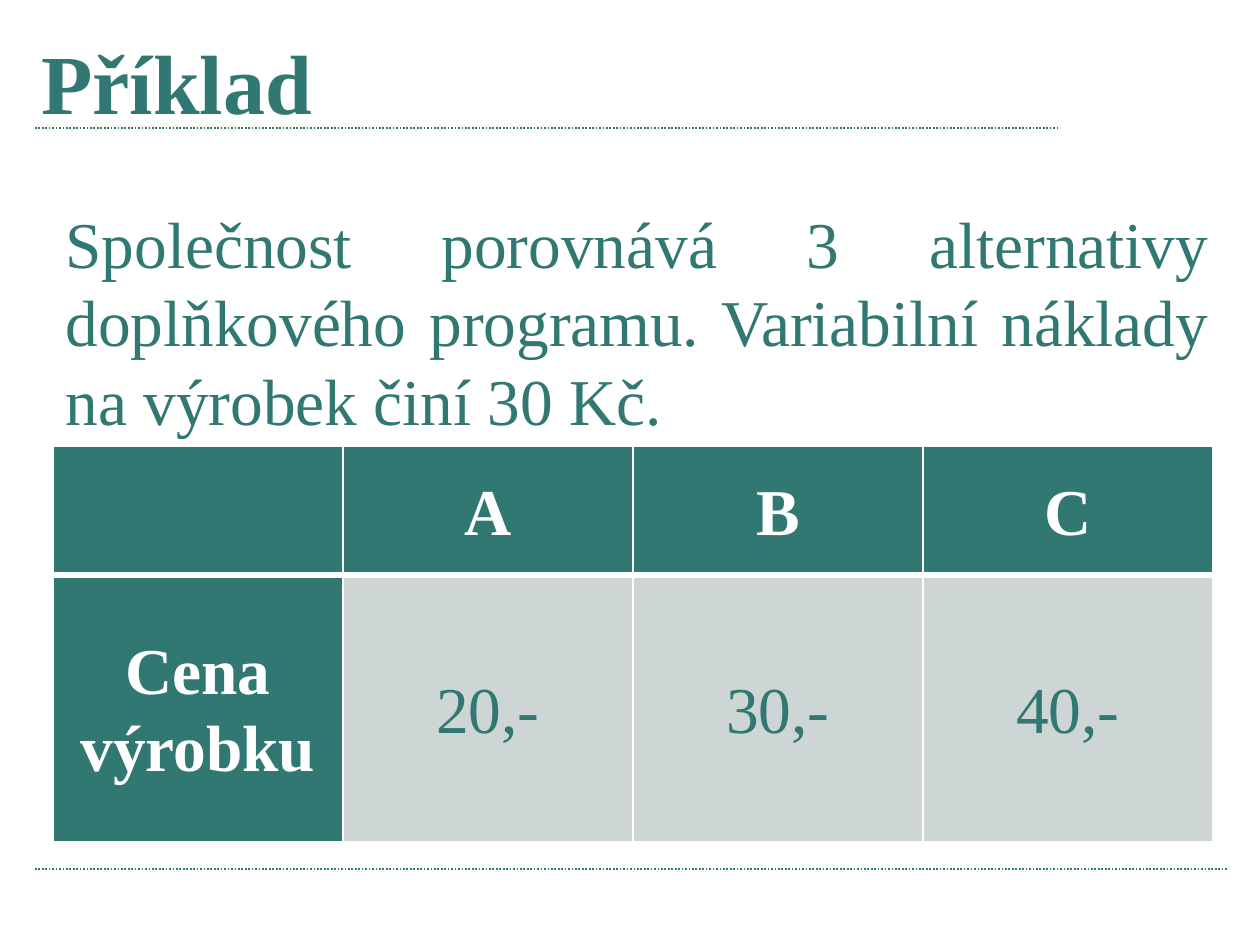
from lxml.etree import SubElement
from pptx import Presentation
from pptx.dml.color import RGBColor
from pptx.enum.dml import MSO_LINE
from pptx.enum.shapes import MSO_CONNECTOR
from pptx.enum.text import MSO_ANCHOR, PP_ALIGN
from pptx.oxml import parse_xml
from pptx.oxml.ns import nsdecls, qn
from pptx.util import Pt

EMU_PER_PX = 914400 // 168
FONT = "Times New Roman"
COLORS = {"teal": "307871", "gray": "CDD6D5", "white": "FFFFFF"}
ROWS = [["", "A", "B", "C"], ["Cena výrobku", "20,-", "30,-", "40,-"]]
ROW_HEIGHTS = [129, 267]
COLUMN_WIDTH = 290


def px(*lengths):
    """Turn pixel lengths into a list of EMU."""
    return [length * EMU_PER_PX for length in lengths]


def color(name):
    """Look up a named colour."""
    return RGBColor.from_string(COLORS[name])


def format_paragraph(paragraph, size, color_name, bold, alignment, spacing):
    """Set the alignment, line spacing and font of a paragraph."""
    paragraph.alignment = alignment
    paragraph.line_spacing = spacing
    for font in [paragraph.font] + [run.font for run in paragraph.runs]:
        font.name = FONT
        font.size = Pt(size)
        font.bold = bold
        font.color.rgb = color(color_name)


def add_text(slide, box, text, size, top_margin, bold=False,
             alignment=PP_ALIGN.LEFT):
    """Add a wrapped teal text box."""
    frame = slide.shapes.add_textbox(*px(*box)).text_frame
    frame.word_wrap = True
    frame.margin_top = px(top_margin)[0]
    frame.text = text
    format_paragraph(frame.paragraphs[0], size, "teal", bold, alignment, 1.0)


def add_dotted_rule(slide, left, right, y):
    """Add a horizontal dotted teal line."""
    rule = slide.shapes.add_connector(MSO_CONNECTOR.STRAIGHT, *px(left, y, right, y))
    rule.line.color.rgb = color("teal")
    rule.line.width = Pt(0.75)
    rule.line.dash_style = MSO_LINE.ROUND_DOT
    SubElement(rule.element.spPr, qn("a:effectLst"))


def set_borders(cell, widths):
    """Give the cell white borders with widths in points by side."""
    properties = cell._tc.get_or_add_tcPr()
    for index, (side, width) in enumerate(widths.items()):
        border = parse_xml(
            f'<a:ln{side} {nsdecls("a")} w="{Pt(width)}"><a:solidFill>'
            f'<a:srgbClr val="{COLORS["white"]}"/></a:solidFill></a:ln{side}>')
        properties.insert(index, border)


def fill_cell(cell, text, is_heading, is_first_row):
    """Write and style one table cell."""
    cell.fill.solid()
    cell.fill.fore_color.rgb = color("teal" if is_heading else "gray")
    cell.vertical_anchor = MSO_ANCHOR.MIDDLE
    cell.margin_left = cell.margin_right = px(10)[0]
    cell.margin_top = cell.margin_bottom = 0
    cell.text_frame.text = text
    format_paragraph(cell.text_frame.paragraphs[0], 28,
                     "white" if is_heading else "teal",
                     is_heading, PP_ALIGN.CENTER, 1.07)
    set_borders(cell, {"L": 1, "R": 1, "T": 1 if is_first_row else 3,
                       "B": 3 if is_first_row else 1})


def add_price_table(slide, left, top):
    """Add the table of product prices."""
    column_count = len(ROWS[0])
    box = px(left, top, COLUMN_WIDTH * column_count, sum(ROW_HEIGHTS))
    table = slide.shapes.add_table(len(ROWS), column_count, *box).table
    for column in table.columns:
        column.width = px(COLUMN_WIDTH)[0]
    for row_index, texts in enumerate(ROWS):
        table.rows[row_index].height = px(ROW_HEIGHTS[row_index])[0]
        for column_index, text in enumerate(texts):
            is_heading = row_index == 0 or column_index == 0
            fill_cell(table.cell(row_index, column_index), text,
                      is_heading, row_index == 0)


def main():
    """Build the slide and save it."""
    presentation = Presentation()
    presentation.slide_width, presentation.slide_height = px(1260, 945)
    slide = presentation.slides.add_slide(presentation.slide_layouts[6])
    add_dotted_rule(slide, 35, 1057, 128)
    add_dotted_rule(slide, 35, 1227, 869)
    add_text(slide, (25, 24, 1110, 99), "Příklad", 36, 6, bold=True)
    add_text(slide, (49, 195, 1176, 548),
             "Společnost porovnává 3 alternativy doplňkového programu. "
             "Variabilní náklady na výrobek činí 30 Kč.",
             28, 8, alignment=PP_ALIGN.JUSTIFY)
    add_price_table(slide, 53, 446)
    presentation.save("out.pptx")


if __name__ == "__main__":
    main()
